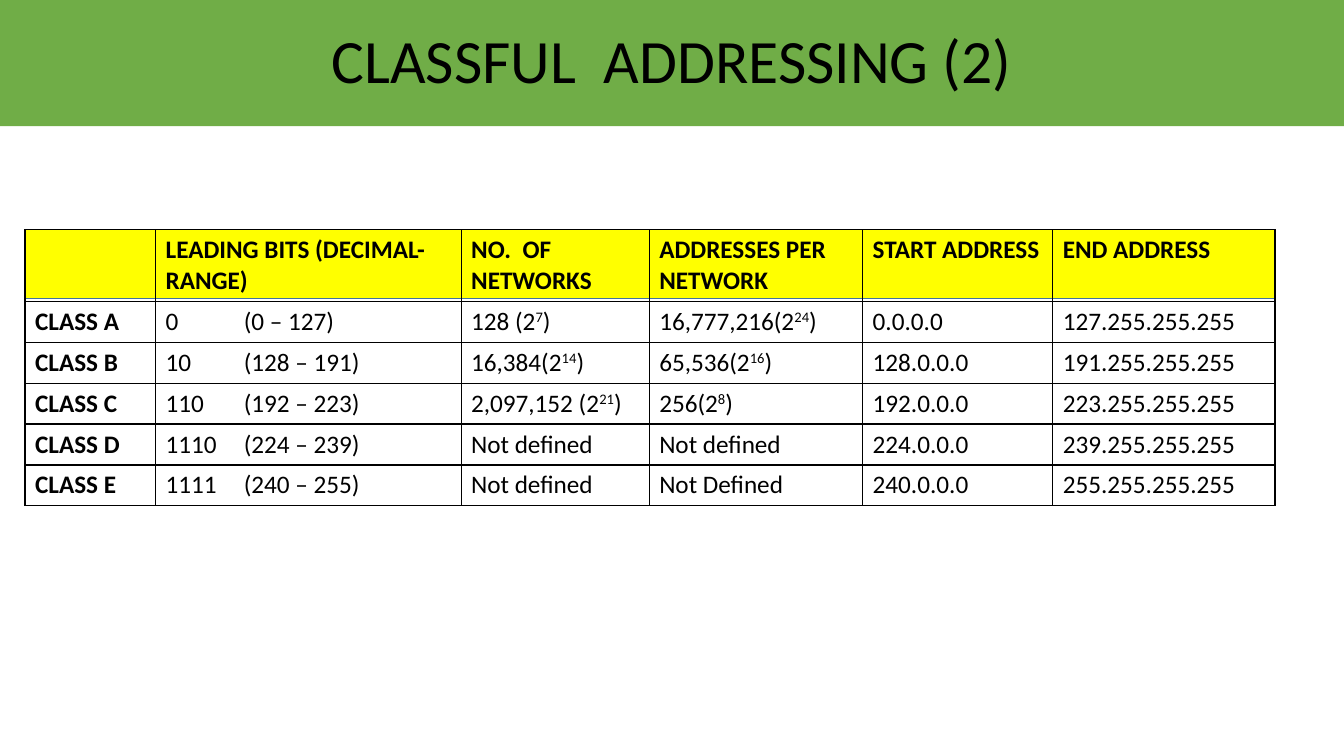
from dataclasses import dataclass

from lxml import etree
from pptx import Presentation
from pptx import util as u
from pptx.dml.color import RGBColor
from pptx.enum import shapes, text
from pptx.oxml import ns


@dataclass(frozen=True)
class Theme:
    font: str = "Calibri"
    ink: str = "000000"
    banner: str = "70AD47"
    header: str = "FFFF00"
    header_line: str = "43739E"
    title_size: int = 44
    table_size: int = 18
    line: int = 1


THEME = Theme()

# A pair of ^ marks encloses a superscript
HEADERS = ["", "LEADING BITS (DECIMAL-RANGE)", "NO.  OF NETWORKS",
           "ADDRESSES PER NETWORK", "START ADDRESS", "END ADDRESS"]
CLASSES = [
    ["CLASS A", "0\t(0 – 127)", "128 (2^7^)", "16,777,216(2^24^)", "0.0.0.0", "127.255.255.255"],
    ["CLASS B", "10\t(128 – 191)", "16,384(2^14^)", "65,536(2^16^)", "128.0.0.0", "191.255.255.255"],
    ["CLASS C", "110\t(192 – 223)", "2,097,152 (2^21^)", "256(2^8^)", "192.0.0.0", "223.255.255.255"],
    ["CLASS D", "1110\t(224 – 239)", "Not defined", "Not defined", "224.0.0.0", "239.255.255.255"],
    ["CLASS E", "1111\t(240 – 255)", "Not defined", "Not Defined", "240.0.0.0", "255.255.255.255"],
]
COLUMN_WIDTHS = [3.29, 7.7, 4.74, 5.38, 4.79, 5.6]
HEADER_HEIGHT, ROW_HEIGHT = 1.8, 1.03
RANGE_TAB = 1.97


def write(tf, content, size, bold=False, align=None, spacing=None, tab=None):
    """Write one formatted paragraph into a text frame."""
    p = tf.paragraphs[0]
    p.alignment = align
    p.line_spacing = spacing
    if tab:
        tabs = etree.SubElement(p._p.get_or_add_pPr(), ns.qn("a:tabLst"))
        etree.SubElement(tabs, ns.qn("a:tab"), pos=str(u.Cm(tab)), algn="l")
    for i, piece in enumerate(content.split("^")):
        r = p.add_run()
        r.text = piece
        r.font.name = THEME.font
        r.font.size = u.Pt(size)
        r.font.bold = bold
        r.font.color.rgb = RGBColor.from_string(THEME.ink)
        if i % 2:
            r._r.get_or_add_rPr().set("baseline", "30000")


def add_block(s, left, top, width, height, fill, line=None):
    """Add a plain filled rectangle."""
    sp = s.shapes.add_shape(shapes.MSO_SHAPE.RECTANGLE, u.Cm(left), u.Cm(top),
                            u.Cm(width), u.Cm(height))
    sp.shadow.inherit = False
    sp.fill.solid()
    sp.fill.fore_color.rgb = RGBColor.from_string(fill)
    if line:
        sp.line.color.rgb = RGBColor.from_string(line)
        sp.line.width = u.Pt(THEME.line)
    else:
        sp.line.fill.background()
    return sp


def add_borders(cell):
    """Outline all four sides of a table cell."""
    tcPr = cell._tc.get_or_add_tcPr()
    for side in ("lnL", "lnR", "lnT", "lnB"):
        ln = etree.SubElement(tcPr, ns.qn(f"a:{side}"), w=str(u.Pt(THEME.line)))
        fill = etree.SubElement(ln, ns.qn("a:solidFill"))
        etree.SubElement(fill, ns.qn("a:srgbClr"), val=THEME.ink)


def add_banner(s, left, top, width, height):
    tf = add_block(s, left, top, width, height, THEME.banner).text_frame
    tf.word_wrap = True
    tf.vertical_anchor = text.MSO_ANCHOR.MIDDLE
    write(tf, "CLASSFUL  ADDRESSING (2)", THEME.title_size,
          align=text.PP_ALIGN.CENTER, spacing=0.9)


def add_class_table(s, left, top):
    width = sum(COLUMN_WIDTHS)
    height = HEADER_HEIGHT + ROW_HEIGHT * len(CLASSES)

    # Header band behind the unfilled table
    add_block(s, left, top, width, 1.73, THEME.header, THEME.header_line)

    # Table grid
    rows = [HEADERS] + CLASSES
    table = s.shapes.add_table(len(rows), len(HEADERS), u.Cm(left), u.Cm(top),
                               u.Cm(width), u.Cm(height)).table
    table.first_row = table.horz_banding = False
    for column, column_width in zip(table.columns, COLUMN_WIDTHS):
        column.width = u.Cm(column_width)

    # Cell contents
    for i, row in enumerate(rows):
        table.rows[i].height = u.Cm(ROW_HEIGHT if i else HEADER_HEIGHT)
        for j, content in enumerate(row):
            cell = table.cell(i, j)
            add_borders(cell)
            cell.fill.background()
            if content:
                write(cell.text_frame, content, THEME.table_size,
                      bold=i == 0 or j == 0,
                      tab=RANGE_TAB if "\t" in content else None)


def main():
    prs = Presentation()
    prs.slide_width, prs.slide_height = u.Cm(33.87), u.Cm(19.05)
    s = prs.slides.add_slide(prs.slide_layouts[6])
    add_class_table(s, 0.63, 5.79)
    add_banner(s, 0, 0, 33.87, 3.18)
    prs.save("out.pptx")


if __name__ == "__main__":
    main()
